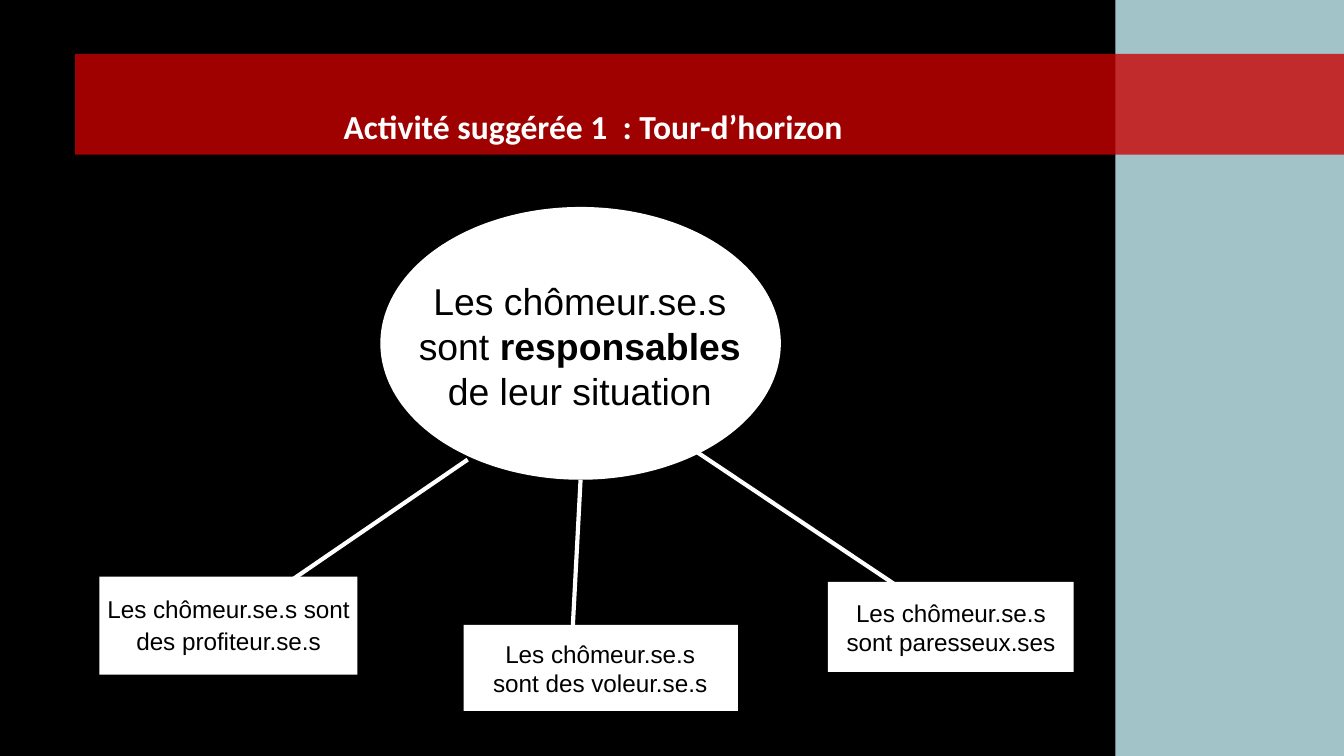
from lxml import etree
from pptx import Presentation
from pptx.dml.color import RGBColor
from pptx.enum import shapes, text
from pptx.oxml.ns import qn
from pptx.util import Inches, Pt

# Content
WIDTH = 10
HEIGHT = WIDTH * 9 / 16
COLORS = {"black": "000000", "white": "FFFFFF", "blue": "A2C4C9", "red": "CC0000"}
TITLE = [("Activité suggérée 1  : Tour-d’horizon", True)]
IDEA = [("Les chômeur.se.s sont ", False), ("responsables ", True),
        ("de leur situation", False)]
# wording, box, text box, line spacing, connector start and end
CLAIMS = [
    ("Les chômeur.se.s sont des profiteur.se.s", (0.74, 4.29, 1.92, 0.73),
     (0.63, 4.3, 2.14, 0.67), 1.1, (3.48, 3.42), (2.15, 4.33)),
    ("Les chômeur.se.s sont des voleur.se.s", (3.45, 4.65, 2.04, 0.64),
     (3.55, 4.65, 1.83, 0.64), 1.0, (4.32, 3.57), (4.26, 4.7)),
    ("Les chômeur.se.s sont paresseux.ses", (6.16, 4.33, 1.83, 0.67),
     None, 1.0, (5.18, 3.36), (6.69, 4.37)),
]

prs = Presentation()
prs.slide_width, prs.slide_height = Inches(WIDTH), Inches(HEIGHT)
slide = prs.slides.add_slide(prs.slide_layouts[6])


def rgb(name):
    return RGBColor.from_string(COLORS[name])


def add_filled(kind, box, color, alpha=None):
    sp = slide.shapes.add_shape(kind, *map(Inches, box))
    sp.shadow.inherit = False
    sp.fill.solid()
    sp.fill.fore_color.rgb = rgb(color)
    sp.line.fill.background()
    if alpha is not None:
        clr = sp.fill._xPr.find(qn("a:solidFill"))[0]
        etree.SubElement(clr, qn("a:alpha"), val=str(alpha * 1000))
    return sp


def add_box(box):
    return slide.shapes.add_textbox(*map(Inches, box))


def write(sp, runs, size, font="Arial", color="black", spacing=1.0,
          anchor=text.MSO_ANCHOR.MIDDLE):
    tf = sp.text_frame
    tf.word_wrap = True
    tf.vertical_anchor = anchor
    tf.margin_left = tf.margin_right = Inches(0.1)
    tf.margin_top = tf.margin_bottom = Inches(0.1)
    p = tf.paragraphs[0]
    p.alignment = text.PP_ALIGN.CENTER
    p.line_spacing = spacing
    for words, bold in runs:
        r = p.add_run()
        r.text = words
        r.font.name, r.font.size, r.font.bold = font, Pt(size), bold
        r.font.color.rgb = rgb(color)


def add_line(start, end):
    ln = slide.shapes.add_connector(shapes.MSO_CONNECTOR.STRAIGHT,
                                    *map(Inches, start + end))
    ln.line.color.rgb = rgb("white")
    ln.line.width = Pt(2.25)
    etree.SubElement(ln._element.spPr, qn("a:effectLst"))


# Background, side panel and title band
RECT = shapes.MSO_SHAPE.RECTANGLE
slide.background.fill.solid()
slide.background.fill.fore_color.rgb = rgb("black")
add_filled(RECT, (8.3, 0, 1.7, HEIGHT), "blue")
add_filled(RECT, (0.56, 0.4, 9.44, 0.75), "red", alpha=78)
write(add_box((1.4, 0.54, 6.03, 0.55)), TITLE, 18, font="Calibri",
      color="white", spacing=1.5, anchor=text.MSO_ANCHOR.TOP)

# Central idea: the text is wider than the ellipse's own text area
add_filled(shapes.MSO_SHAPE.OVAL, (2.83, 1.54, 2.98, 2.03), "white")
write(add_box((2.91, 1.97, 2.81, 1.21)), IDEA, 20, anchor=text.MSO_ANCHOR.TOP)

# Claims, each linked to the central idea
for words, box, text_box, spacing, start, end in CLAIMS:
    sp = add_filled(RECT, box, "white")
    if text_box:
        sp = add_box(text_box)
    write(sp, [(words, False)], 13, spacing=spacing)
    add_line(start, end)

prs.save("out.pptx")
